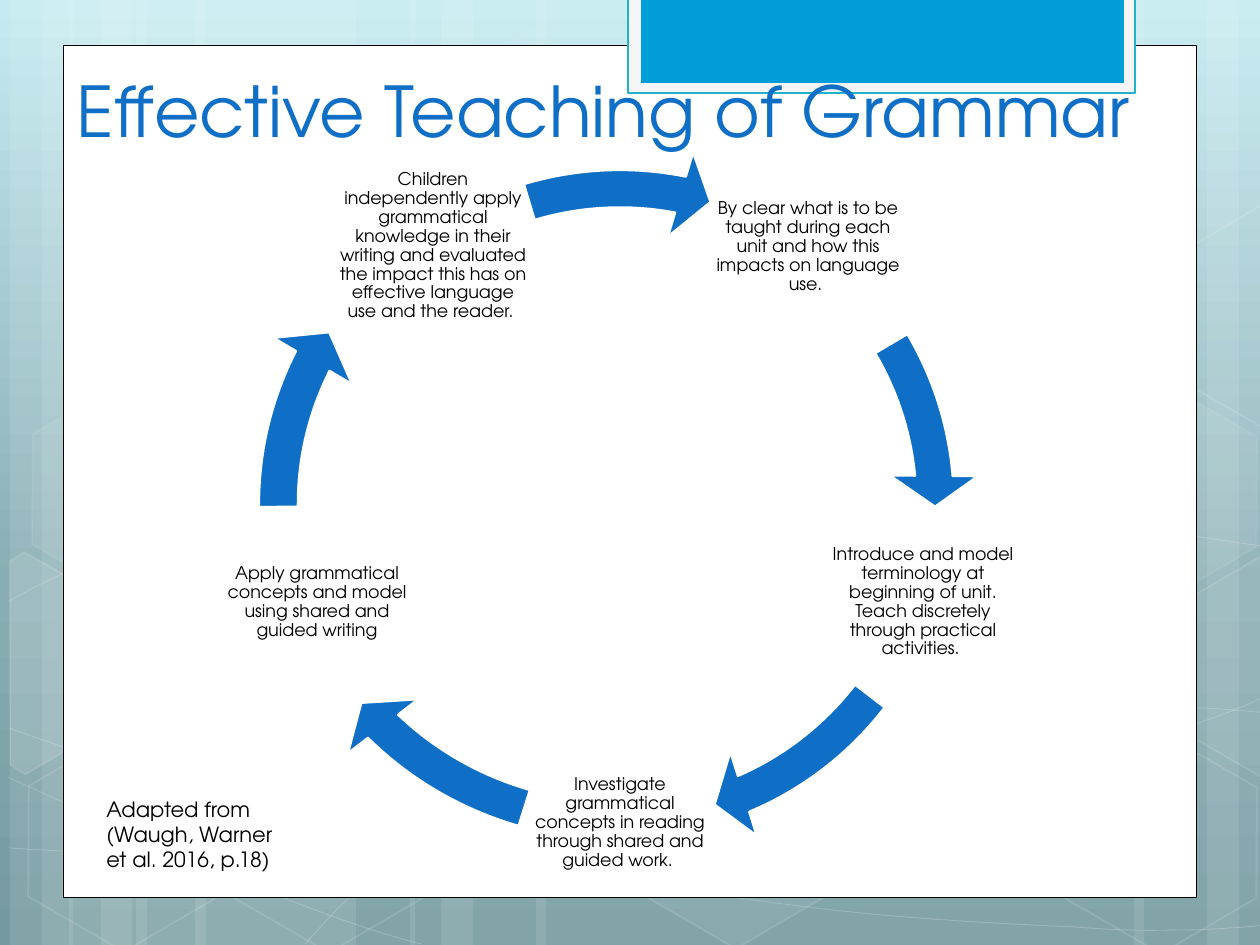
import copy
import math

import pptx
from pptx.dml.color import RGBColor
from pptx.enum.shapes import MSO_SHAPE
from pptx.enum.text import MSO_ANCHOR, MSO_AUTO_SIZE, PP_ALIGN
from pptx.oxml.ns import qn
from pptx.util import Emu, Pt

TITLE = "Effective Teaching of Grammar"
SOURCE = "Adapted from (Waugh, Warner et al. 2016, p.18)"
# step text, centre of the text, size of the arrow that follows, arrow end and start
CYCLE = [
    ("By clear what is to be taught during each unit and how this impacts on language use. ",
     (808, 247), (718, 718), (212.932, 197.663)),
    ("Introduce and model terminology at beginning of unit. "
     "Teach discretely through practical activities. ",
     (923, 602), (718, 718), (40.146, 22.535)),
    ("Investigate grammatical concepts in reading through shared and guided work. ",
     (620, 823), (752, 723), (82.106, 64.495)),
    ("Apply grammatical concepts and model using shared and guided writing",
     (317, 602), (774, 745), (122.978, 107.709)),
    ("Children independently apply grammatical knowledge in their writing and evaluated "
     "the impact this has on effective language use and the reader. ",
     (433, 246), (718, 718), (168.656, 151.985)),
]
CYCLE_CENTRE = (620, 504)
STEP_SIZE = 192

COLORS = {
    "sky": "C4EBF1", "mist": "88ADB3", "sea": "749AA0", "white": "FFFFFF",
    "black": "000000", "blue": "0F6FC6", "tab": "009DD9", "tab_frame": "F5F5F5",
    "tab_edge": "21B2C9",
}
FONT = "TeX Gyre Adventor"
WIDTH, HEIGHT = 1260, 945
EMU_PER_PX = 914400 / 126

# Backdrop: left, width and rotation of each full-height stripe
STRIPES = [(136, 220, 0), (10, 63, 0), (42, 105, 0), (195, 220, 0), (69, 63, 0),
           (101, 105, 0), (924, 220, 180), (1207, 63, 180), (1134, 105, 180),
           (536, 388, 0), (410, 63, 0), (441, 105, 0)]
# Start point, then two handles and an end point for each bend
WAVES = [
    [(9, 848), (68, 852), (145, 855), (239, 854), (334, 853), (451, 851), (577, 838),
     (703, 825), (882, 801), (998, 777), (1113, 753), (1231, 716), (1269, 694)],
    [(9, 601), (45, 581), (82, 562), (152, 543), (224, 524), (326, 496), (437, 488),
     (549, 479), (685, 478), (824, 488), (963, 498), (1193, 537), (1269, 547)],
    [(8, 777), (160, 847), (311, 916), (421, 944)],
    [(9, 728), (48, 742), (88, 756), (161, 776), (234, 795), (344, 827), (450, 848),
     (554, 869), (687, 892), (791, 905), (896, 919), (1008, 924), (1075, 927),
     (1140, 932), (1158, 930), (1191, 930), (1223, 929), (1246, 927), (1269, 925)],
    [(305, 944), (328, 919), (350, 893), (381, 871), (411, 848), (454, 823), (489, 805),
     (524, 788), (546, 780), (592, 767), (638, 755), (722, 737), (766, 728),
     (811, 719), (818, 719), (857, 717), (896, 713), (958, 709), (1000, 708),
     (1045, 707), (1116, 708), (1116, 708), (1144, 708), (1173, 708), (1201, 708),
     (1223, 709), (1245, 711), (1256, 712), (1268, 713), (1264, 712), (1268, 713)],
]
TILT = 30
# Left, top, fill opacity (None for no fill), line opacity
HEXAGONS = [(421, 45, 4, 8), (626, 742, 6, 12), (14, 745, None, 12), (18, 393, 7, 8),
            (219, 746, None, 12), (949, 571, 10, 12), (1051, 747, None, 12),
            (1051, 396, 7, 8)]
# Hexagons cut by the slide edge: centre of rotation, corners as seen, fill opacity
CUT_HEXAGONS = [
    ((45, 674),
     [(10, 561), (24, 552), (121, 607), (120, 718), (25, 774), (10, 765)], 10),
    ((1241, 655),
     [(1167, 611), (1261, 556), (1271, 562), (1271, 772), (1263, 777), (1167, 722)], 4),
    ((1241, 304),
     [(1167, 261), (1261, 205), (1273, 212), (1271, 422), (1263, 427), (1167, 372)], None),
]
# Box, fill, line colour, line width
PANELS = [
    ((63, 45, 1134, 853), "white", "black", 0.5),
    ((628, -3, 507, 96), "tab_frame", "tab_edge", 1.25),
    ((641, -3, 483, 86), "tab", None, 0),
]


def px(*lengths):
    return [Emu(round(length * EMU_PER_PX)) for length in lengths]


def rgb(name):
    return RGBColor.from_string(COLORS[name])


def paint(fill, color, opacity=100):
    if color is None or opacity is None:
        fill.background()
        return
    fill.solid()
    fill.fore_color.rgb = rgb(color)
    if opacity < 100:
        solid = fill._xPr.find(qn("a:solidFill"))
        alpha = solid[0].makeelement(qn("a:alpha"), {"val": str(opacity * 1000)})
        solid[0].append(alpha)


def style(shape, fill, fill_opacity=100, line=None, width=0, line_opacity=100):
    shape.shadow.inherit = False
    paint(shape.fill, fill, fill_opacity)
    paint(shape.line.fill, line, line_opacity)
    if line:
        shape.line.width = Pt(width)
    return shape


def draw_outline(shapes, points, close):
    builder = shapes.build_freeform(*points[0], scale=EMU_PER_PX)
    builder.add_line_segments(points[1:], close=close)
    return builder.convert_to_shape()


def draw_wave(shapes, points):
    """Draw the outline, then turn each three line segments into one cubic curve."""
    wave = draw_outline(shapes, points, False)
    segments = list(wave._element.iter(qn("a:lnTo")))
    for i in range(0, len(segments), 3):
        curve = segments[i].makeelement(qn("a:cubicBezTo"), {})
        segments[i].addprevious(curve)
        for segment in segments[i:i + 3]:
            curve.append(segment[0])
            segment.getparent().remove(segment)
    return wave


def turn(point, centre, degrees):
    angle = math.radians(degrees)
    dx, dy = point[0] - centre[0], point[1] - centre[1]
    return (centre[0] + dx * math.cos(angle) - dy * math.sin(angle),
            centre[1] + dx * math.sin(angle) + dy * math.cos(angle))


def write(frame, text, size, color, anchor, align=PP_ALIGN.LEFT):
    frame.text = text
    frame.word_wrap = True
    frame.auto_size = MSO_AUTO_SIZE.NONE
    frame.vertical_anchor = anchor
    paragraph = frame.paragraphs[0]
    paragraph.alignment = align
    paragraph.font.name = FONT
    paragraph.font.size = Pt(size)
    paragraph.font.color.rgb = rgb(color)
    return paragraph


def draw_background(slide):
    fill = slide.background.fill
    fill.gradient()
    fill.gradient_angle = 270
    stop_list = slide._element.find(".//" + qn("a:gsLst"))
    stop_list.insert(1, copy.deepcopy(stop_list[0]))
    for stop, color, position in zip(fill.gradient_stops, ("sky", "mist", "sea"),
                                     (0, 0.62, 1)):
        stop.color.rgb = rgb(color)
        stop.position = position


def draw_backdrop(shapes):
    for left, width, rotation in STRIPES:
        stripe = shapes.add_shape(MSO_SHAPE.RECTANGLE, *px(left, 0, width, HEIGHT))
        stripe.rotation = rotation
        style(stripe, "white", 10)
    for wave in WAVES:
        style(draw_wave(shapes, wave), None, 100, "white", 0.5, 20)
    for left, top, fill_opacity, line_opacity in HEXAGONS:
        hexagon = shapes.add_shape(MSO_SHAPE.HEXAGON, *px(left, top, 220, 192))
        hexagon.adjustments[0] = 0.285
        hexagon.rotation = TILT
        style(hexagon, "white", fill_opacity, "white", 1, line_opacity)
    for centre, corners, opacity in CUT_HEXAGONS:
        upright = [turn(corner, centre, -TILT) for corner in corners]
        hexagon = draw_outline(shapes, upright, True)
        hexagon.rotation = TILT
        style(hexagon, "white", opacity, "white", 1, 12)
    for box, fill, line, width in PANELS:
        style(shapes.add_shape(MSO_SHAPE.RECTANGLE, *px(*box)), fill, 100, line, width)


def draw_cycle(shapes):
    for text, (x, y), (width, height), (end, start) in CYCLE:
        half = STEP_SIZE // 2
        step = shapes.add_textbox(*px(x - half, y - half, STEP_SIZE, STEP_SIZE))
        frame = step.text_frame
        frame.margin_left, frame.margin_top, frame.margin_right, frame.margin_bottom = px(1, 1, 1, 1)
        write(frame, text, 10, "black", MSO_ANCHOR.MIDDLE, PP_ALIGN.CENTER).line_spacing = 0.9

        arrow = shapes.add_shape(
            MSO_SHAPE.CIRCULAR_ARROW,
            *px(CYCLE_CENTRE[0] - width / 2, CYCLE_CENTRE[1] - height / 2, width, height))
        for i, value in enumerate((0.052, 3.359, end, start, 0.061)):
            arrow.adjustments[i] = value
        style(arrow, "blue", 100, "white", 1.25)


def main():
    deck = pptx.Presentation()
    deck.slide_width, deck.slide_height = px(WIDTH, HEIGHT)
    slide = deck.slides.add_slide(deck.slide_layouts[5])
    shapes = slide.shapes
    draw_background(slide)
    draw_backdrop(shapes)

    title = shapes.title
    shapes._spTree.append(title._element)  # in front of the backdrop
    title.left, title.top, title.width, title.height = px(64, 0, 1134, 158)
    write(title.text_frame, TITLE, 40, "blue", MSO_ANCHOR.BOTTOM)

    draw_cycle(shapes)
    source = shapes.add_textbox(*px(94, 790, 198, 89))
    write(source.text_frame, SOURCE, 12, "black", MSO_ANCHOR.TOP)
    deck.save("out.pptx")


if __name__ == "__main__":
    main()
